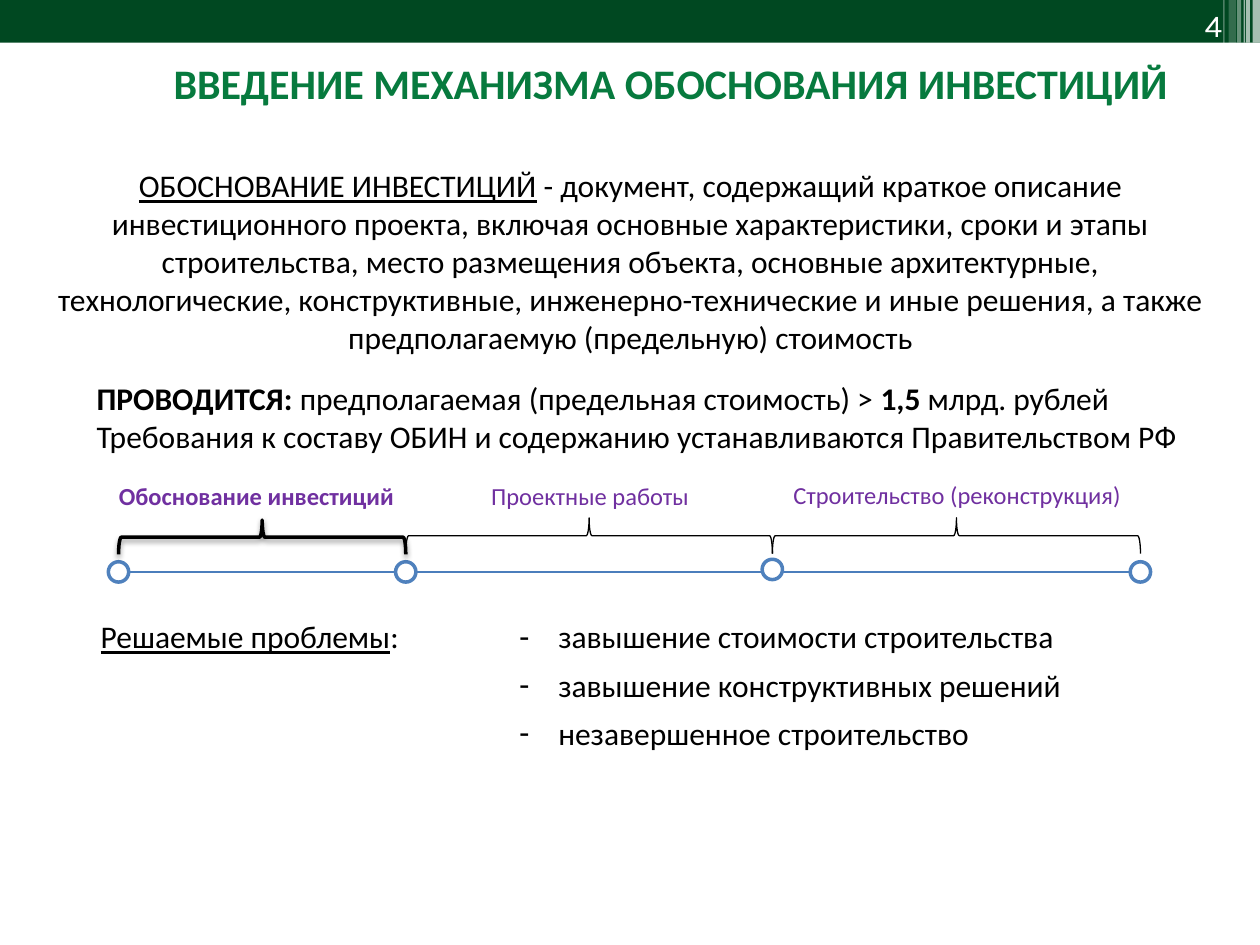
from lxml.etree import SubElement
from pptx import Presentation
from pptx.dml.color import RGBColor
from pptx.enum.shapes import MSO_CONNECTOR, MSO_SHAPE
from pptx.enum.text import MSO_ANCHOR, MSO_AUTO_SIZE, PP_ALIGN
from pptx.oxml.ns import qn
from pptx.util import Cm, Pt

COLORS = {
    "band": "004821",
    "white": "FFFFFF",
    "title": "077A3E",
    "black": "000000",
    "label": "7030A0",
    "ring": "4F81BD",
    "axis": "4B7EBC",
}
STRIPES = [
    (25.25, 0.15, 0.86, 65),
    (25.12, 0.08, 0.86, 65),
    (25.07, 0.03, 0.86, 60),
    (24.94, 0.08, 0.86, 40),
    (24.77, 0.15, 0.91, 20),
    (24.66, 0.03, 0.91, 30),
]
NODES = [(2.39, 11.53), (8.18, 11.53), (15.57, 11.48), (22.99, 11.53)]
STAGES = [
    ("Обоснование инвестиций", 1.78, 9.58, 6.78, True),
    ("Проектные работы", 8.2, 9.58, 7.39, False),
    ("Строительство (реконструкция)", 15.6, 9.55, 7.39, False),
]
GOALS = [
    "завышение стоимости строительства",
    "завышение конструктивных решений",
    "незавершенное строительство",
]


def color(name):
    return RGBColor.from_string(COLORS[name])


def place(shape, left, top, width, height):
    shape.left, shape.top = Cm(left), Cm(top)
    shape.width, shape.height = Cm(width), Cm(height)


def style(frame, size, tone, align=PP_ALIGN.LEFT, face="Calibri"):
    frame.word_wrap = True
    frame.auto_size = MSO_AUTO_SIZE.NONE
    frame.vertical_anchor = MSO_ANCHOR.TOP
    for para in frame.paragraphs:
        para.alignment = align
        for run in para.runs:
            run.font.size = Pt(size)
            run.font.name = face
            run.font.color.rgb = color(tone)


def add_text(slide, box, lines, size, tone, align=PP_ALIGN.LEFT, face="Calibri"):
    shape = slide.shapes.add_textbox(*map(Cm, box))
    frame = shape.text_frame
    for row, parts in enumerate(lines):
        para = frame.add_paragraph() if row else frame.paragraphs[0]
        for text, mark in parts:
            run = para.add_run()
            run.text = text
            run.font.bold = mark == "b"
            run.font.underline = mark == "u"
    style(frame, size, tone, align, face)


def add_shape(slide, kind, box, fill=None, line=None, width=0.75):
    shape = slide.shapes.add_shape(kind, *map(Cm, box))
    shape.shadow.inherit = False
    if fill:
        shape.fill.solid()
        shape.fill.fore_color.rgb = color(fill)
    else:
        shape.fill.background()
    if line:
        shape.line.color.rgb = color(line)
        shape.line.width = Pt(width)
    else:
        shape.line.fill.background()
    return shape


def add_alpha(parent, share):
    SubElement(parent, qn("a:alpha"), val=str(share * 1000))


def add_band(slide):
    add_shape(slide, MSO_SHAPE.RECTANGLE, (0, 0, 25.4, 0.86), "band")
    for left, width, height, share in STRIPES:
        bar = add_shape(slide, MSO_SHAPE.RECTANGLE, (left, 0, width, height), "white")
        add_alpha(bar.fill._xPr.find(".//" + qn("a:srgbClr")), share)
    add_text(slide, (22.6, 0, 2.29, 0.94), [[("4", "")]], 18, "white",
             PP_ALIGN.RIGHT, "Karla")


def add_title(slide):
    title = slide.shapes.title
    place(title, 0.71, 1.04, 23.9, 1.27)
    frame = title.text_frame
    frame.text = "ВВЕДЕНИЕ МЕХАНИЗМА ОБОСНОВАНИЯ ИНВЕСТИЦИЙ"
    frame.margin_left = Cm(2.79)
    style(frame, 24, "title")
    frame.paragraphs[0].runs[0].font.bold = True


def add_list(slide):
    body = slide.placeholders[1]
    place(body, 10.21, 12.32, 14.38, 3)
    frame = body.text_frame
    frame.text = "\n".join(GOALS)
    for para in frame.paragraphs:
        props = para._p.get_or_add_pPr()
        props.set("marL", str(Cm(0.79)))
        props.set("indent", str(-Cm(0.79)))
        SubElement(props, qn("a:buChar"), char="-")
        para.space_before = Pt(0)
        para.space_after = Pt(6)
    style(frame, 18, "black")


def add_axis(slide):
    (start, level), (end, _) = NODES[0], NODES[-1]
    line = slide.shapes.add_connector(
        MSO_CONNECTOR.STRAIGHT, Cm(start), Cm(level), Cm(end), Cm(level))
    line.line.color.rgb = color("axis")
    line.line.width = Pt(0.75)
    SubElement(line._element.spPr, qn("a:effectLst"))
    size = 0.41
    for left, top in NODES:
        box = (left - size / 2, top - size / 2, size, size)
        add_shape(slide, MSO_SHAPE.OVAL, box, "white", "ring", 2)


def add_brace(slide, start, end, heavy):
    deep, span = (0.69 if heavy else 0.72), end - start
    mid = 10.83 if heavy else 10.8
    box = ((start + end - deep) / 2, mid - span / 2, deep, span)
    brace = add_shape(slide, MSO_SHAPE.LEFT_BRACE, box, None, "black",
                      2 if heavy else 0.75)
    brace.rotation = 90
    brace.adjustments[0] = 0.08
    brace.adjustments[1] = 0.5
    if heavy:
        glow = brace._element.spPr.find(qn("a:effectLst"))
        cast = SubElement(glow, qn("a:outerShdw"), blurRad=str(Pt(3.1)),
                          dist=str(Pt(1.6)), dir="5400000", rotWithShape="0")
        add_alpha(SubElement(cast, qn("a:srgbClr"), val=COLORS["black"]), 38)


def add_stages(slide):
    for stage, first, last in zip(STAGES, NODES, NODES[1:]):
        text, left, top, width, heavy = stage
        add_brace(slide, first[0], last[0], heavy)
        add_text(slide, (left, top, width, 0.86), [[(text, "b" if heavy else "")]],
                 14, "label", PP_ALIGN.CENTER)


def main():
    deck = Presentation()
    deck.slide_width, deck.slide_height = Cm(25.4), Cm(19.05)
    slide = deck.slides.add_slide(deck.slide_layouts[1])
    add_band(slide)
    add_title(slide)
    add_text(slide, (0.71, 3.23, 24, 4.11), [[
        ("ОБОСНОВАНИЕ ИНВЕСТИЦИЙ", "u"),
        (" - документ, содержащий краткое описание инвестиционного проекта, "
         "включая основные характеристики, сроки и этапы строительства, место "
         "размещения объекта, основные архитектурные, технологические, "
         "конструктивные, инженерно-технические и иные решения, а также "
         "предполагаемую (предельную) стоимость", ""),
    ]], 18, "black", PP_ALIGN.CENTER)
    add_text(slide, (1.7, 7.52, 22.89, 1.8), [
        [("ПРОВОДИТСЯ:", "b"), (" предполагаемая (предельная стоимость) > ", ""),
         ("1,5", "b"), (" млрд. рублей", "")],
        [("Требования к составу ОБИН и содержанию устанавливаются "
          "Правительством РФ", "")],
    ], 18, "black")
    add_axis(slide)
    add_stages(slide)
    add_text(slide, (1.78, 12.32, 6.58, 1.02),
             [[("Решаемые проблемы", "u"), (":", "")]], 18, "black")
    add_list(slide)
    deck.save("out.pptx")


if __name__ == "__main__":
    main()
